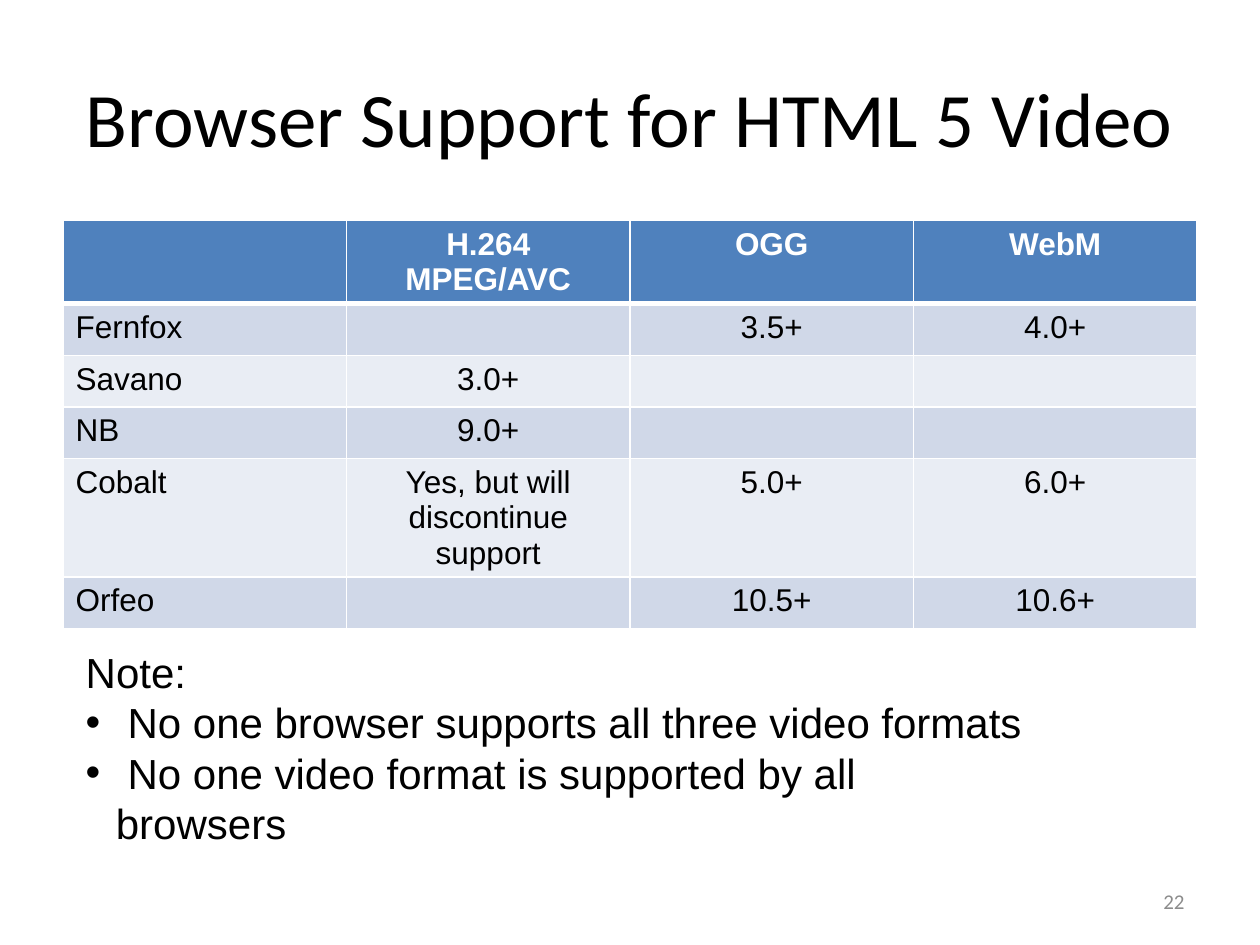
import pptx
import pptx.util
import pptx.dml.color
import pptx.enum.text
import pptx.oxml
import pptx.oxml.ns
from lxml import etree

Inches = pptx.util.Inches
Pt = pptx.util.Pt
RGB = pptx.dml.color.RGBColor
Align = pptx.enum.text.PP_ALIGN
Anchor = pptx.enum.text.MSO_ANCHOR
Fit = pptx.enum.text.MSO_AUTO_SIZE

BLACK = RGB(0, 0, 0)
WHITE = RGB(0xFF, 0xFF, 0xFF)
GRAY = RGB(0x8C, 0x8C, 0x8C)
BLUE = RGB(0x4F, 0x81, 0xBD)
BANDS = (RGB(0xD0, 0xD8, 0xE8), RGB(0xE9, 0xED, 0xF4))

TITLE = "Browser Support for HTML 5 Video"
ROWS = [
    ("", "H.264 MPEG/AVC", "OGG", "WebM"),
    ("Fernfox", "", "3.5+", "4.0+"),
    ("Savano", "3.0+", "", ""),
    ("NB", "9.0+", "", ""),
    ("Cobalt", "Yes, but will discontinue support", "5.0+", "6.0+"),
    ("Orfeo", "", "10.5+", "10.6+"),
]
NOTES = [
    "Note:",
    " No one browser supports all three video formats",
    " No one video format is supported by all browsers",
]
PAGE = "22"

FONTS = {
    "title": {"name": "Calibri", "size": Pt(44), "color": BLACK},
    "head": {"name": "Arial", "size": Pt(18), "color": WHITE, "bold": True},
    "cell": {"name": "Arial", "size": Pt(18), "color": BLACK, "bold": False},
    "note": {"name": "Arial", "size": Pt(24), "color": BLACK},
    "page": {"name": "Calibri", "size": Pt(12), "color": GRAY},
}


def style(para, kind, align):
    para.alignment = align
    for key, val in FONTS[kind].items():
        if key == "color":
            para.font.color.rgb = val
        else:
            setattr(para.font, key, val)


def place(shape, left, top, width, height):
    box = {"left": left, "top": top, "width": width, "height": height}
    for key, val in box.items():
        setattr(shape, key, Inches(val))


def edge(cell, low):
    """Draw white cell borders; low is the width of the bottom one."""
    props = cell._tc.get_or_add_tcPr()
    sides = {"lnL": 1, "lnR": 1, "lnT": 1, "lnB": low}
    for spot, (tag, width) in enumerate(sides.items()):
        line = etree.Element(pptx.oxml.ns.qn("a:" + tag), w=str(Pt(width)))
        fill = etree.SubElement(line, pptx.oxml.ns.qn("a:solidFill"))
        etree.SubElement(fill, pptx.oxml.ns.qn("a:srgbClr"), val=str(WHITE))
        props.insert(spot, line)


def bullet(para, char):
    """Set a hanging bullet, or none when char is empty."""
    props = para._p.get_or_add_pPr()
    hang = Inches(0.24) if char else 0
    props.set("marL", str(hang))
    props.set("indent", str(-hang))
    if char:
        etree.SubElement(props, pptx.oxml.ns.qn("a:buFont"), typeface="Arial")
        etree.SubElement(props, pptx.oxml.ns.qn("a:buChar"), char=char)
    else:
        etree.SubElement(props, pptx.oxml.ns.qn("a:buNone"))


def add_grid(slide):
    frame = slide.shapes.add_table(
        len(ROWS), len(ROWS[0]),
        Inches(0.5), Inches(1.75), Inches(9), Inches(0.41 * len(ROWS)))
    for r, row in enumerate(ROWS):
        for c, text in enumerate(row):
            cell = frame.table.cell(r, c)
            cell.text = text
            cell.fill.solid()
            cell.fill.fore_color.rgb = BANDS[(r - 1) % 2] if r else BLUE
            style(cell.text_frame.paragraphs[0], "cell" if r else "head",
                  Align.CENTER if c else Align.LEFT)
            edge(cell, 1 if r else 3)


def add_notes(body):
    place(body, 0.58, 5.08, 7.71, 1.31)
    frame = body.text_frame
    frame.text = "\n".join(NOTES)
    frame.auto_size = Fit.NONE
    frame.vertical_anchor = Anchor.TOP
    for i, para in enumerate(frame.paragraphs):
        style(para, "note", Align.LEFT)
        para.space_before = Pt(0)
        bullet(para, "•" if i else "")


def main():
    deck = pptx.Presentation()
    deck.slide_width, deck.slide_height = Inches(10), Inches(7.5)
    slide = deck.slides.add_slide(deck.slide_layouts[1])
    title, body = slide.placeholders

    place(title, 0.5, 0.3, 9, 1.25)
    title.text_frame.text = TITLE
    title.text_frame.vertical_anchor = Anchor.MIDDLE
    style(title.text_frame.paragraphs[0], "title", Align.CENTER)

    add_grid(slide)
    add_notes(body)

    page = slide.shapes.add_textbox(
        Inches(7.17), Inches(6.95), Inches(2.33), Inches(0.4))
    page.text_frame.text = PAGE
    page.text_frame.word_wrap = True
    page.text_frame.vertical_anchor = Anchor.MIDDLE
    style(page.text_frame.paragraphs[0], "page", Align.RIGHT)

    deck.save("out.pptx")


if __name__ == "__main__":
    main()
